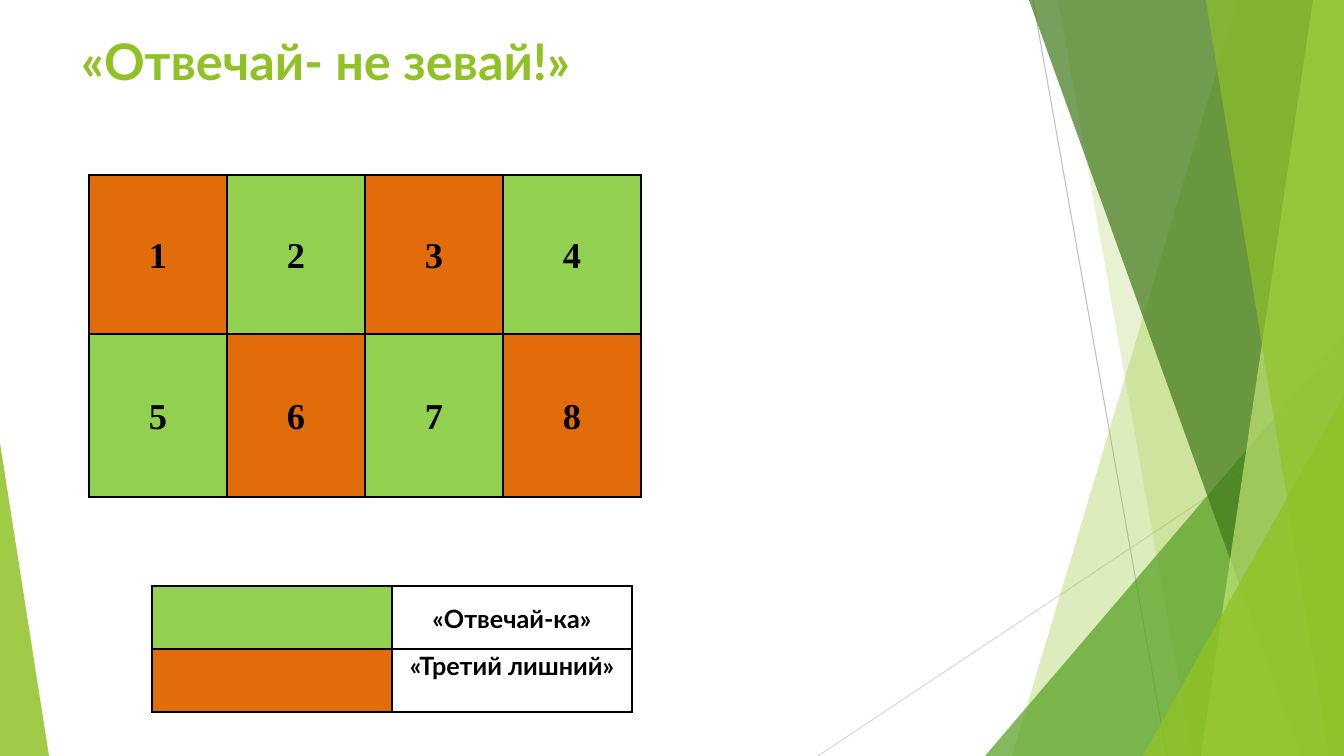
from dataclasses import dataclass

from lxml.etree import SubElement
from pptx import Presentation
from pptx.dml.color import RGBColor
from pptx.enum.shapes import MSO_CONNECTOR, MSO_SHAPE
from pptx.enum.text import MSO_ANCHOR, PP_ALIGN
from pptx.oxml.ns import qn
from pptx.util import Pt

PX = 9072
WIDE, HIGH = 1344, 756
LIME, GREEN, ORANGE, BLACK = "90C226", "92D050", "E36C0A", "000000"


@dataclass
class Ray:
    x1: int
    y1: int
    x2: int
    y2: int
    color: str


@dataclass
class Band:
    top: int
    foot: int
    color: str
    alpha: int


@dataclass
class Wedge:
    x: int
    y: int
    w: int
    h: int
    peak: int
    color: str
    alpha: int


@dataclass
class Cell:
    text: str = ""
    fill: str = ""
    anchor: MSO_ANCHOR = MSO_ANCHOR.MIDDLE


@dataclass
class Grid:
    x: int
    y: int
    col: int
    rows: list[int]
    cells: list[list[Cell]]
    font: str
    size: int


RAYS = [Ray(1033, 0, 1167, HIGH, "BFBFBF"), Ray(WIDE, 406, 818, HIGH, "D9D9D9")]
FACETS = [
    Band(1238, 1012, LIME, 30),
    Band(1058, 1192, LIME, 20),
    Wedge(985, 336, 359, 420, 1, "54A021", 72),
    Band(1029, 1301, "3F7819", 70),
    Band(1313, 1201, "C0E474", 70),
    Band(1206, 1329, LIME, 65),
    Wedge(1143, 396, 201, 360, 1, LIME, 80),
    Wedge(0, 443, 49, 313, 0, LIME, 85),
]
BOARD = [
    [Cell(str(r * 4 + c + 1), GREEN if (r + c) % 2 else ORANGE) for c in range(4)]
    for r in range(2)
]
LEGEND = [
    [Cell(fill=GREEN), Cell("«Отвечай-ка»")],
    [Cell(fill=ORANGE), Cell("«Третий лишний»", anchor=MSO_ANCHOR.TOP)],
]
GRIDS = [
    Grid(89, 175, 138, [159, 163], BOARD, "Times New Roman", 26),
    Grid(152, 586, 240, [63, 63], LEGEND, "Lato", 18),
]


def rgb(color: str) -> RGBColor:
    return RGBColor.from_string(color)


def write(frame, text: str, *, font: str, size: int, color: str,
          align=PP_ALIGN.LEFT, space: float = 1.0, after: int = 0) -> None:
    para = frame.paragraphs[0]
    para.alignment = align
    para.line_spacing = space
    para.space_after = Pt(after)
    run = para.add_run()
    run.text = text
    run.font.name = font
    run.font.size = Pt(size)
    run.font.bold = True
    run.font.color.rgb = rgb(color)


def tint(shape, color: str, alpha: int) -> None:
    shape.shadow.inherit = False
    shape.line.fill.background()
    shape.fill.solid()
    shape.fill.fore_color.rgb = rgb(color)
    tone = shape.fill._xPr.find(qn("a:solidFill"))[0]
    SubElement(tone, qn("a:alpha")).set("val", str(alpha * 1000))


def draw_ray(slide, ray: Ray) -> None:
    ends = [v * PX for v in (ray.x1, ray.y1, ray.x2, ray.y2)]
    line = slide.shapes.add_connector(MSO_CONNECTOR.STRAIGHT, *ends)
    line.line.color.rgb = rgb(ray.color)
    line.line.width = Pt(0.75)
    SubElement(line._element.spPr, qn("a:effectLst"))


def draw_band(slide, band: Band) -> None:
    pen = slide.shapes.build_freeform(band.top, 0, scale=PX)
    pen.add_line_segments([(WIDE, 0), (WIDE, HIGH), (band.foot, HIGH)], close=True)
    tint(pen.convert_to_shape(), band.color, band.alpha)


def draw_wedge(slide, wedge: Wedge) -> None:
    box = [v * PX for v in (wedge.x, wedge.y, wedge.w, wedge.h)]
    shape = slide.shapes.add_shape(MSO_SHAPE.ISOSCELES_TRIANGLE, *box)
    shape.adjustments[0] = wedge.peak
    tint(shape, wedge.color, wedge.alpha)


def edge(cell) -> None:
    props = cell._tc.get_or_add_tcPr()
    for place, side in enumerate(("lnL", "lnR", "lnT", "lnB")):
        line = props.makeelement(qn(f"a:{side}"), {"w": str(Pt(1))})
        fill = SubElement(line, qn("a:solidFill"))
        SubElement(fill, qn("a:srgbClr")).set("val", BLACK)
        props.insert(place, line)


def draw_cell(cell, data: Cell, grid: Grid) -> None:
    cell.margin_left = cell.margin_right = 7 * PX
    cell.margin_top = cell.margin_bottom = 0
    cell.vertical_anchor = data.anchor
    if data.fill:
        cell.fill.solid()
        cell.fill.fore_color.rgb = rgb(data.fill)
    else:
        cell.fill.background()
    edge(cell)
    if data.text:
        write(cell.text_frame, data.text, font=grid.font, size=grid.size,
              color=BLACK, align=PP_ALIGN.CENTER, space=1.07, after=8)


def draw_grid(slide, grid: Grid) -> None:
    count = len(grid.cells[0])
    box = [v * PX for v in (grid.x, grid.y, grid.col * count, sum(grid.rows))]
    table = slide.shapes.add_table(len(grid.rows), count, *box).table
    table.first_row = table.horz_banding = False
    for col in table.columns:
        col.width = grid.col * PX
    for r, high in enumerate(grid.rows):
        table.rows[r].height = high * PX
        for c, data in enumerate(grid.cells[r]):
            draw_cell(table.cell(r, c), data, grid)


def draw_title(slide) -> None:
    title = slide.shapes.title
    title.left, title.top, title.width, title.height = (
        v * PX for v in (71, 25, 948, 94))
    title.text_frame.vertical_anchor = MSO_ANCHOR.TOP
    write(title.text_frame, "«Отвечай- не зевай!»", font="Lato", size=36, color=LIME)


def main() -> None:
    deck = Presentation()
    deck.slide_width, deck.slide_height = WIDE * PX, HIGH * PX
    slide = deck.slides.add_slide(deck.slide_layouts[5])
    for ray in RAYS:
        draw_ray(slide, ray)
    for facet in FACETS:
        if isinstance(facet, Band):
            draw_band(slide, facet)
        else:
            draw_wedge(slide, facet)
    draw_title(slide)
    for grid in GRIDS:
        draw_grid(slide, grid)
    deck.save("out.pptx")


if __name__ == "__main__":
    main()
